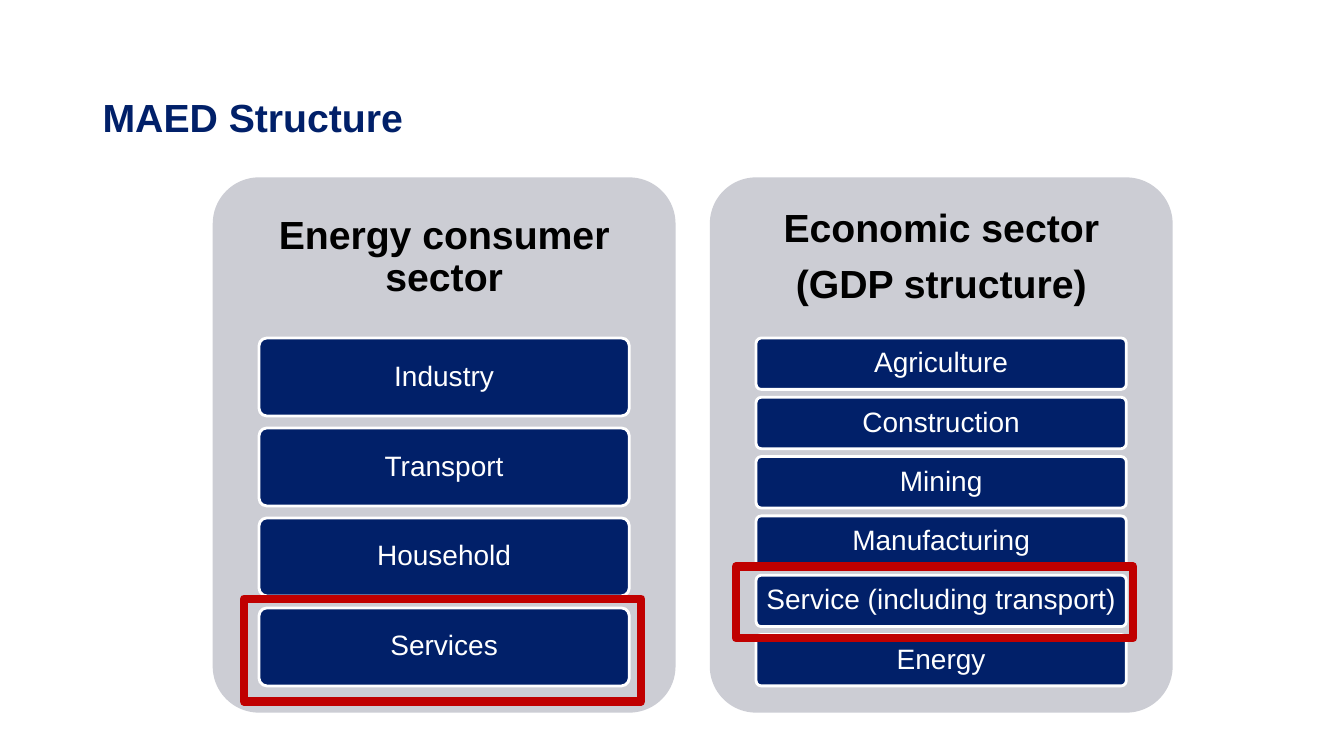
from collections import namedtuple
from dataclasses import dataclass

from pptx import Presentation
from pptx.dml.color import RGBColor
from pptx.enum.shapes import MSO_SHAPE
from pptx.enum.text import MSO_ANCHOR, PP_ALIGN
from pptx.util import Inches, Pt

Box = namedtuple("Box", "left top width height")


@dataclass(frozen=True)
class Theme:
    """Colours, font and sizes of the slide."""
    navy: str = "012069"
    panel: str = "CCCDD4"
    white: str = "FFFFFF"
    black: str = "000000"
    highlight: str = "C00000"
    font: str = "Arial"
    heading_size: int = 28
    item_size: int = 20


THEME = Theme()


def add_text(shape, text, *, size, color, bold=False, align=PP_ALIGN.CENTER,
             anchor=MSO_ANCHOR.MIDDLE, inset=(0.12, 0.12), space_after=0):
    """Write each line of text as a formatted paragraph."""
    frame = shape.text_frame
    frame.word_wrap = True
    frame.vertical_anchor = anchor
    frame.margin_left = frame.margin_right = Inches(inset[0])
    frame.margin_top = frame.margin_bottom = Inches(inset[1])
    frame.text = text
    for para in frame.paragraphs:
        para.alignment = align
        para.line_spacing = 0.9
        para.space_after = Pt(space_after)
        for span in para.runs:
            span.font.name = THEME.font
            span.font.size = Pt(size)
            span.font.bold = bold
            span.font.color.rgb = RGBColor.from_string(color)


def add_block(page, box, kind=MSO_SHAPE.ROUNDED_RECTANGLE, *, fill=None, line=None, width=2):
    """Draw a shape with the given fill and outline."""
    block = page.shapes.add_shape(kind, *map(Inches, box))
    block.shadow.inherit = False
    if kind == MSO_SHAPE.ROUNDED_RECTANGLE:
        block.adjustments[0] = 0.1
    if fill:
        block.fill.solid()
        block.fill.fore_color.rgb = RGBColor.from_string(fill)
    else:
        block.fill.background()
    if line:
        block.line.color.rgb = RGBColor.from_string(line)
        block.line.width = Pt(width)
    else:
        block.line.fill.background()
    return block


def add_title(page, box, text):
    """Place the slide title at the bottom of its box."""
    title = page.shapes.add_textbox(*map(Inches, box))
    add_text(title, text, size=THEME.heading_size, color=THEME.navy, bold=True,
             align=PP_ALIGN.LEFT, anchor=MSO_ANCHOR.BOTTOM, inset=(0.1, 0.05))


def add_sector_panel(page, box, heading, items):
    """Draw a panel with a heading over an evenly spaced stack of items."""
    add_block(page, box, fill=THEME.panel)
    heading_height = 0.3 * box.height
    heading_box = page.shapes.add_textbox(
        *map(Inches, box._replace(height=heading_height)))
    add_text(heading_box, heading, size=THEME.heading_size, color=THEME.black,
             bold=True, space_after=10)
    gap_ratio = 0.154
    count = len(items)
    item_height = 0.65 * box.height / (count + (count - 1) * gap_ratio)
    for index, item in enumerate(items):
        top = box.top + heading_height + index * item_height * (1 + gap_ratio)
        item_box = Box(box.left + 0.1 * box.width, top, 0.8 * box.width, item_height)
        block = add_block(page, item_box, fill=THEME.navy, line=THEME.white)
        add_text(block, item, size=THEME.item_size, color=THEME.white, inset=(0.06, 0.04))


def add_highlight(page, box):
    """Frame an item with a thick outline."""
    add_block(page, box, MSO_SHAPE.RECTANGLE, line=THEME.highlight, width=6)


def main():
    """Build and save the slide."""
    deck = Presentation()
    deck.slide_width, deck.slide_height = Inches(13.33), Inches(7.5)
    page = deck.slides.add_slide(deck.slide_layouts[6])
    add_title(page, Box(0.92, 0, 11.5, 1.45), "MAED Structure")
    consumer_box = Box(2.11, 1.76, 4.59, 5.31)
    add_sector_panel(page, consumer_box, "Energy consumer sector",
                     ["Industry", "Transport", "Household", "Services"])
    add_sector_panel(page, consumer_box._replace(left=7.04),
                     "Economic sector\n(GDP structure)",
                     ["Agriculture", "Construction", "Mining", "Manufacturing",
                      "Service (including transport)", "Energy"])
    add_highlight(page, Box(2.42, 5.94, 3.94, 1.02))
    add_highlight(page, Box(7.3, 5.62, 3.94, 0.71))
    deck.save("out.pptx")


if __name__ == "__main__":
    main()
